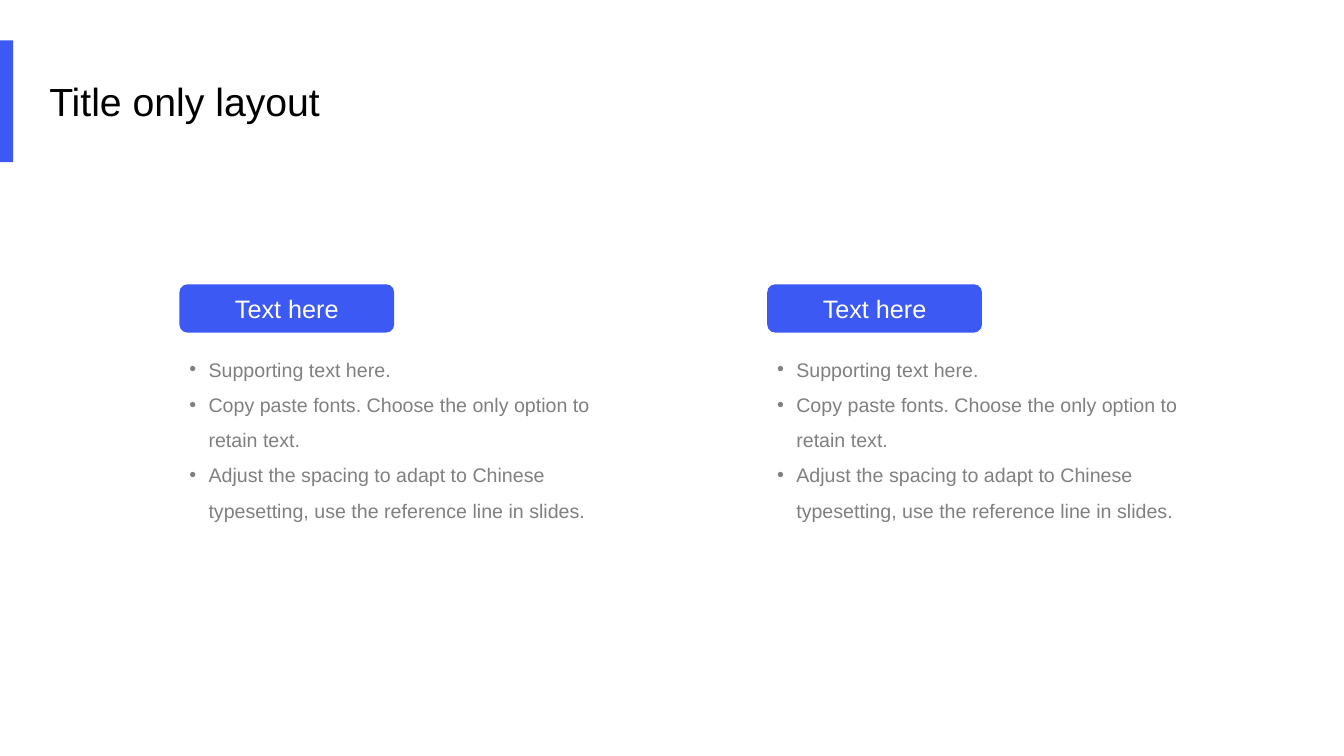
from pptx import Presentation
from pptx.dml.color import RGBColor
from pptx.enum.shapes import MSO_SHAPE as Preset
from pptx.enum.text import MSO_ANCHOR as Anchor, PP_ALIGN as Align
from pptx.oxml.ns import qn
from pptx.util import Inches, Pt
from lxml.etree import SubElement

BLUE, WHITE, BLACK, GRAY = "3C59F3", "FFFFFF", "000000", "808080"
COLUMN_LEFTS = (1.78, 7.61)
POINTS = (
    "Supporting text here.",
    "Copy paste fonts. Choose the only option to retain text.",
    "Adjust the spacing to adapt to Chinese typesetting, use the reference line in slides.",
)


def add_block(preset, left, top, width, height):
    block = page.shapes.add_shape(
        preset, Inches(left), Inches(top), Inches(width), Inches(height))
    block.shadow.inherit = False
    block.fill.solid()
    block.fill.fore_color.rgb = RGBColor.from_string(BLUE)
    block.line.fill.background()
    return block


def style(para, size, color):
    para.font.name = "Arial"
    para.font.size = Pt(size)
    para.font.color.rgb = RGBColor.from_string(color)


deck = Presentation()
deck.slide_width, deck.slide_height = Inches(13.33), Inches(7.5)
page = deck.slides.add_slide(deck.slide_layouts[6])

# Title with accent bar
add_block(Preset.RECTANGLE, 0, 0.4, 0.13, 1.21)
title = page.shapes.add_textbox(Inches(0.39), Inches(0.72), Inches(3.51), Inches(0.57))
title.text_frame.word_wrap = True
title.text_frame.text = "Title only layout"
style(title.text_frame.paragraphs[0], 28, BLACK)

# Two columns: label above bullet list
for left in COLUMN_LEFTS:
    label = add_block(Preset.ROUNDED_RECTANGLE, left, 2.82, 2.13, 0.48)
    label.text_frame.text = "Text here"
    label.text_frame.vertical_anchor = Anchor.MIDDLE
    heading = label.text_frame.paragraphs[0]
    heading.alignment = Align.CENTER
    style(heading, 18, WHITE)

    box = page.shapes.add_textbox(Inches(left), Inches(3.38), Inches(4.53), Inches(2.18))
    box.text_frame.word_wrap = True
    box.text_frame.text = "\n".join(POINTS)
    for para in box.text_frame.paragraphs:
        para.line_spacing = 1.5
        properties = para._p.get_or_add_pPr()
        properties.set("marL", str(Inches(0.19)))
        properties.set("indent", str(Inches(-0.19)))
        SubElement(properties, qn("a:buFont"), typeface="Arial")
        SubElement(properties, qn("a:buChar"), char="•")
        style(para, 14, GRAY)

deck.save("out.pptx")
